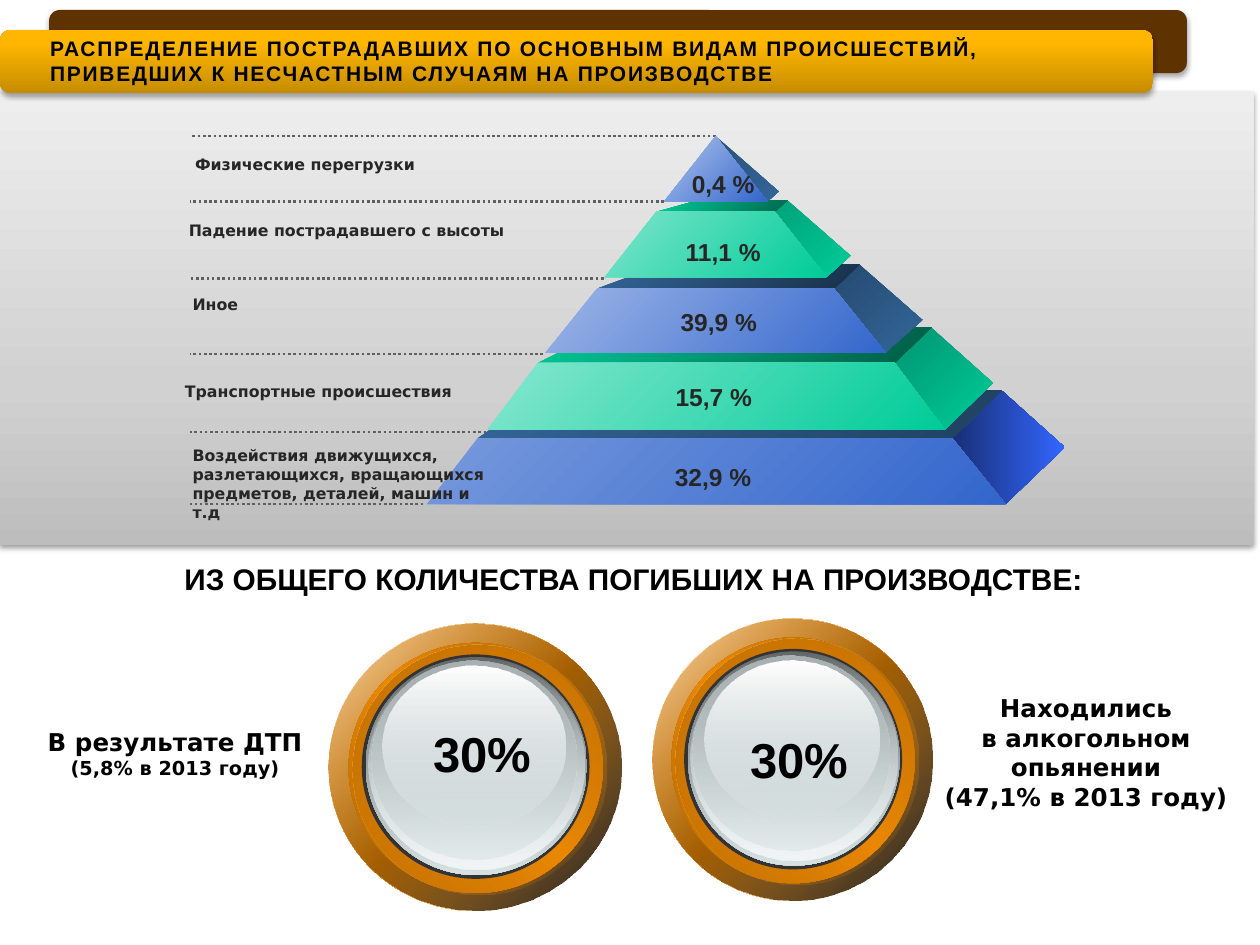
"""Builds a slide on workplace accidents: a pyramid of causes and two dials."""
from copy import deepcopy
from lxml import etree
from pptx import Presentation
from pptx.dml.color import RGBColor
from pptx.enum.dml import MSO_LINE
from pptx.enum.shapes import MSO_CONNECTOR, MSO_SHAPE
from pptx.enum.text import MSO_ANCHOR, MSO_AUTO_SIZE, PP_ALIGN
from pptx.oxml.ns import qn
from pptx.util import Inches, Pt

RECT, ROUND, OVAL = MSO_SHAPE.RECTANGLE, MSO_SHAPE.ROUNDED_RECTANGLE, MSO_SHAPE.OVAL
LEFT, MID = PP_ALIGN.LEFT, PP_ALIGN.CENTER
TOP, CENTER = MSO_ANCHOR.TOP, MSO_ANCHOR.MIDDLE
FIT, FIXED = MSO_AUTO_SIZE.SHAPE_TO_FIT_TEXT, MSO_AUTO_SIZE.NONE
DOTS, STRAIGHT = MSO_LINE.ROUND_DOT, MSO_CONNECTOR.STRAIGHT

COLORS = {
    "black": "000000", "white": "FFFFFF", "ink": "262626", "dots": "5F5F5F",
    "gray": "BDBDBD", "silver": "D1D1D1", "pale": "EEEEEE",
    "brown": "5F3201", "ochre": "C58C00", "gold": "FFB601", "amber": "FFB602",
    "navy": "182F76", "royal": "3366FF", "blue": "3366CC", "steel": "336699",
    "slate": "204161", "dusk": "254A70", "night": "183049", "denim": "285179",
    "sky1": "B1C5EC", "sky3": "9EB6E7", "sky5": "7799DD",
    "green": "00CC99", "mint2": "7FE5CC", "mint4": "86E7CF", "jade2": "00A279",
    "jade4": "009570", "pine2": "00684E", "pine4": "005A44",
    "orange": "EB8803", "rust": "B46802", "copper": "C17002", "coal": "333333",
    "lead": "636869", "ash": "AAB2B3", "ice": "D6E1E2", "frost": "F1F5F5",
}

PANELS = [
    (RECT, (0, 0.73, 9.95, 3.6), ["gray", "silver", "pale"], [0, 35, 100], 38),
    (ROUND, (0.39, 0.08, 9.03, 0.5), ["brown"], None, 35),
    (ROUND, (0, 0.24, 9.15, 0.5), ["ochre", "gold", "amber"], [0, 80, 100], 35),
]

RULES = [(3.36, 4), (3.9, 3.43), (4.31, 2.81), (4.79, 2.21), (5.27, 1.6), (5.68, 1.08)]

TIERS = [
    {"base": (3.39, 7.98, 4), "edge": (3.79, 7.56, 3.48), "back": (4.33, 7.95, 3.1),
     "tip": (8.45, 3.55), "turn": 0,
     "side": ["navy", "royal"], "lid": ["steel", "slate"], "front": ["sky5", "blue"]},
    {"base": (3.87, 7.5, 3.41), "edge": (4.27, 7.1, 2.88), "back": (4.83, 7.39, 2.6),
     "tip": (7.88, 3.04), "turn": 45,
     "side": ["jade4", "green"], "lid": ["green", "pine4"], "front": ["mint4", "green"]},
    {"base": (4.33, 7.03, 2.8), "edge": (4.74, 6.62, 2.29), "back": (5.26, 6.82, 2.1),
     "tip": (7.32, 2.54), "turn": 45,
     "side": ["dusk", "steel"], "lid": ["steel", "night"], "front": ["sky3", "blue"]},
    {"base": (4.8, 6.56, 2.2), "edge": (5.21, 6.15, 1.68), "back": (5.54, 6.25, 1.59),
     "tip": (6.75, 2.03), "turn": 45,
     "side": ["jade2", "green"], "lid": ["green", "pine2"], "front": ["mint2", "green"]},
    {"base": (5.27, 6.09, 1.6), "edge": (5.68, 5.68, 1.08), "back": (5.68, 5.68, 1.08),
     "tip": (6.18, 1.52), "turn": 45,
     "side": ["denim", "steel"], "lid": [], "front": ["sky1", "blue"]},
]

DIALS = [(5.18, 4.91, 2.22, 2.24), (2.61, 4.95, 2.32, 2.28)]
RINGS = [
    ((0, 0, 2.22, 2.24), ["white", "orange", "white"], 45),
    ((0, 0, 2.22, 2.24), [("orange", 32), ("black", 90)], 45),
    ((0.15, 0.15, 1.93, 1.95), ["rust", "orange", "rust"], 315),
    ((0.18, 0.16, 1.93, 1.95), ["copper", ("orange", 0)], 45),
    ((0.25, 0.24, 1.73, 1.75), ["coal"], 0),
    ((0.28, 0.26, 1.68, 1.7), ["lead", "ice"], 90),
    ((0.3, 0.27, 1.64, 1.65), [("ice", 0), "frost"], 90),
    ((0.32, 0.29, 1.56, 1.55), ["ash", ("ice", 48)], 90),
    ((0.41, 0.33, 1.39, 1.25), ["white", ("ice", 38)], 90),
]

BASE = {"font": "Arial", "size": 14, "color": "ink", "align": MID,
        "wrap": False, "anchor": TOP, "fit": FIT}
LABEL = BASE | {"font": "DejaVu Sans", "size": 9, "align": LEFT}
WIDE = {"wrap": True}
HEAD = BASE | WIDE | {"size": 12, "color": "black", "align": LEFT, "fit": FIXED, "track": 1}
TOTAL = BASE | WIDE | {"size": 17, "color": "black"}
NOTE = BASE | {"font": "DejaVu Sans", "color": "black", "anchor": CENTER, "fit": FIXED}
BIG = BASE | {"size": 28, "color": "black"}

TEXTS = [
    ((0.3, 0.23, 8.84, 0.5), HEAD,
     ["РАСПРЕДЕЛЕНИЕ ПОСТРАДАВШИХ ПО ОСНОВНЫМ ВИДАМ ПРОИСШЕСТВИЙ,\n"
      "ПРИВЕДШИХ К НЕСЧАСТНЫМ СЛУЧАЯМ НА ПРОИЗВОДСТВЕ"]),
    ((1.45, 1.18, 1.96, 0.25), LABEL, ["Физические перегрузки"]),
    ((1.4, 1.7, 2.7, 0.25), LABEL, ["Падение пострадавшего с высоты"]),
    ((1.43, 2.29, 0.57, 0.25), LABEL, ["Иное"]),
    ((1.37, 2.98, 2.34, 0.25), LABEL | WIDE, ["Транспортные происшествия"]),
    ((1.43, 3.49, 2.64, 0.71), LABEL | WIDE,
     ["Воздействия движущихся,", "разлетающихся, вращающихся",
      "предметов, деталей, машин и т.д"]),
    ((5.39, 1.29, 0.7, 0.34), BASE, ["0,4 %"]),
    ((5.34, 1.83, 0.8, 0.34), BASE, ["11,1 %"]),
    ((5.3, 2.39, 0.81, 0.34), BASE, ["39,9 %"]),
    ((5.26, 2.98, 0.81, 0.34), BASE, ["15,7 %"]),
    ((5.16, 3.62, 1, 0.34), BASE | WIDE, ["32,9 %"]),
    ((0.67, 4.4, 8.72, 0.39), TOTAL, ["ИЗ ОБЩЕГО КОЛИЧЕСТВА ПОГИБШИХ НА ПРОИЗВОДСТВЕ:"]),
    ((0.27, 5.59, 2.24, 0.78), NOTE, ["В результате ДТП", ("(5,8% в 2013 году)", 11)]),
    ((7.5, 5.58, 2.24, 0.78), NOTE,
     ["Находились\nв алкогольном\nопьянении", "(47,1% в 2013 году)"]),
    ((5.85, 5.74, 0.99, 0.57), BIG, ["30%"]),
    ((3.28, 5.69, 1.09, 0.57), BIG, ["30%"]),
]


def rgb(name):
    return RGBColor.from_string(COLORS[name])


def node(up, tag, **vals):
    return etree.SubElement(up, qn(tag), {k: str(v) for k, v in vals.items()})


def tint(up, name, alpha):
    color = node(up, "a:srgbClr", val=COLORS[name])
    if alpha < 100:
        node(color, "a:alpha", val=alpha * 1000)


def paint(shape, stops, turn=0, marks=None):
    shape.shadow.inherit = False
    shape.line.fill.background()
    if len(stops) == 1:
        shape.fill.solid()
        shape.fill.fore_color.rgb = rgb(stops[0])
        return
    shape.fill.gradient()
    grad = shape._element.spPr.find(qn("a:gradFill"))
    grad.clear()
    row = node(grad, "a:gsLst")
    for i, stop in enumerate(stops):
        name, alpha = (stop, 100) if isinstance(stop, str) else stop
        mark = marks[i] if marks else 100 * i // (len(stops) - 1)
        tint(node(row, "a:gs", pos=mark * 1000), name, alpha)
    node(grad, "a:lin", ang=turn * 60000, scaled=0)


def shade(shape, alpha):
    rule = node(shape._element.spPr.find(qn("a:effectLst")), "a:outerShdw",
                blurRad=Pt(3.1), dist=Pt(1.7), dir=5400000, algn="t", rotWithShape=0)
    tint(rule, "black", alpha)


def face(shapes, spots, stops, turn):
    first, *rest = [(Inches(x), Inches(y)) for x, y in dict.fromkeys(spots)]
    form = shapes.build_freeform(*first)
    form.add_line_segments(rest, close=True)
    paint(form.convert_to_shape(), stops, turn)


def tier(shapes, part):
    (bl, br, by), (el, er, ey), (kl, kr, ky) = part["base"], part["edge"], part["back"]
    face(shapes, [(br, by), (er, ey), (kr, ky), part["tip"]], part["side"], part["turn"])
    if part["lid"]:
        face(shapes, [(el, ey), (er, ey), (kr, ky), (kl, ky)], part["lid"], 45)
    face(shapes, [(el, ey), (er, ey), (br, by), (bl, by)], part["front"], 45)


def dial(shapes, x, y, w, h):
    sx, sy = w / RINGS[0][0][2], h / RINGS[0][0][3]
    for (dx, dy, dw, dh), stops, turn in RINGS:
        box = x + dx * sx, y + dy * sy, dw * sx, dh * sy
        paint(shapes.add_shape(OVAL, *map(Inches, box)), stops, turn)


def write(shapes, box, form, lines):
    frame = shapes.add_textbox(*map(Inches, box)).text_frame
    look = {"word_wrap": form["wrap"], "auto_size": form["fit"],
            "vertical_anchor": form["anchor"]}
    for key, val in look.items():
        setattr(frame, key, val)
    for i, line in enumerate(lines):
        words, size = (line, form["size"]) if isinstance(line, str) else line
        para = frame.add_paragraph() if i else frame.paragraphs[0]
        para.text, para.alignment = words, form["align"]
        for run in para.runs:
            for key, val in {"name": form["font"], "size": Pt(size), "bold": True}.items():
                setattr(run.font, key, val)
            run.font.color.rgb = rgb(form["color"])
            if "track" in form:
                run._r.get_or_add_rPr().set("spc", str(form["track"] * 100))
        for gap in para._p.findall(qn("a:br")):
            gap.append(deepcopy(para.runs[0]._r.rPr))


def main():
    deck = Presentation()
    deck.slide_width, deck.slide_height = Inches(10), Inches(7.5)
    shapes = deck.slides.add_slide(deck.slide_layouts[6]).shapes
    for kind, box, stops, marks, alpha in PANELS:
        panel = shapes.add_shape(kind, *map(Inches, box))
        paint(panel, stops, 270, marks)
        shade(panel, alpha)
    for x, y in RULES:
        rule = shapes.add_connector(STRAIGHT, *map(Inches, (x, y, 1.51, y)))
        rule.line.color.rgb = rgb("dots")
        rule.line.width, rule.line.dash_style = Pt(1.5), DOTS
        node(rule._element.spPr, "a:effectLst")
    for part in TIERS:
        tier(shapes, part)
    for box in DIALS:
        dial(shapes, *box)
    for text in TEXTS:
        write(shapes, *text)
    deck.save("out.pptx")


if __name__ == "__main__":
    main()
